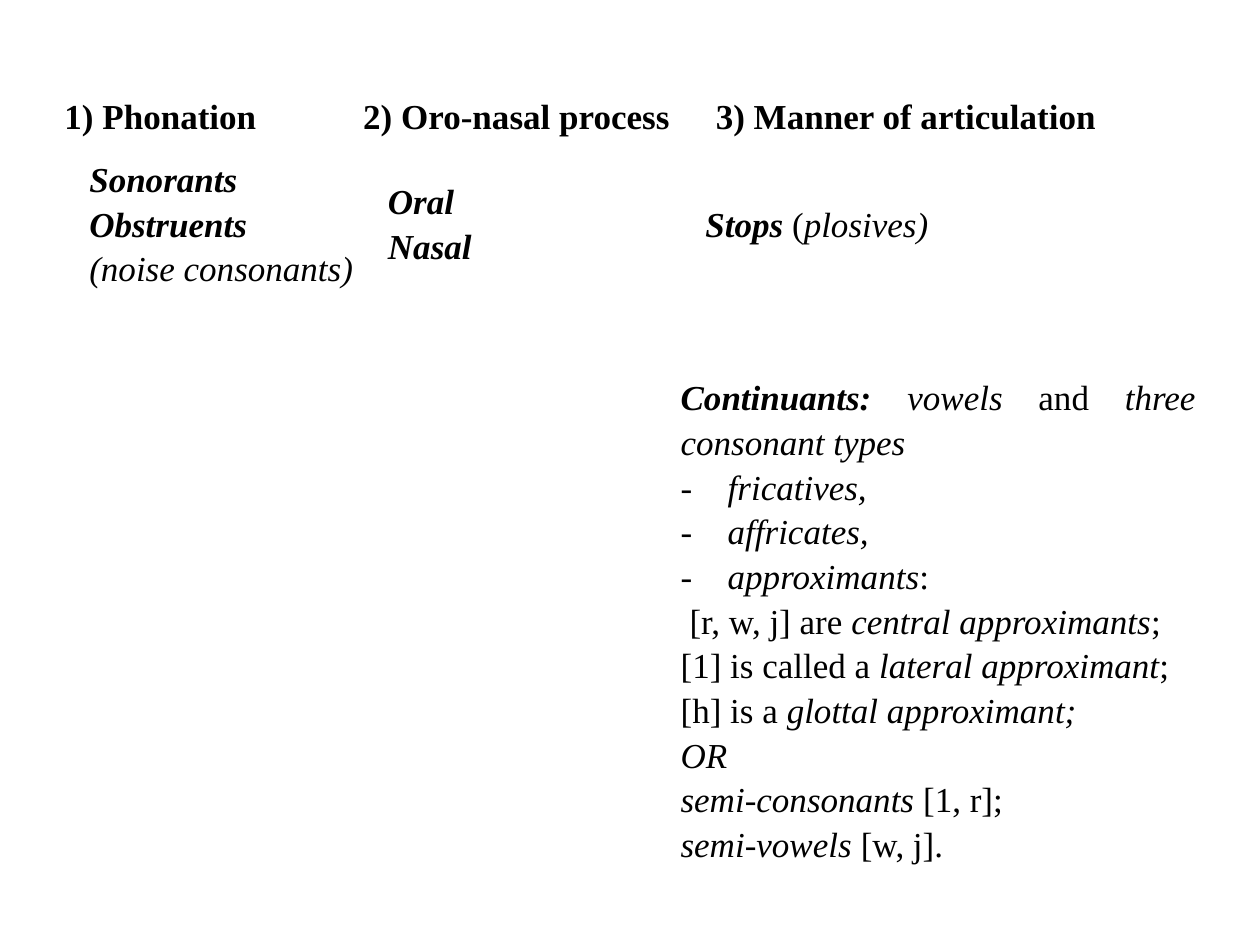
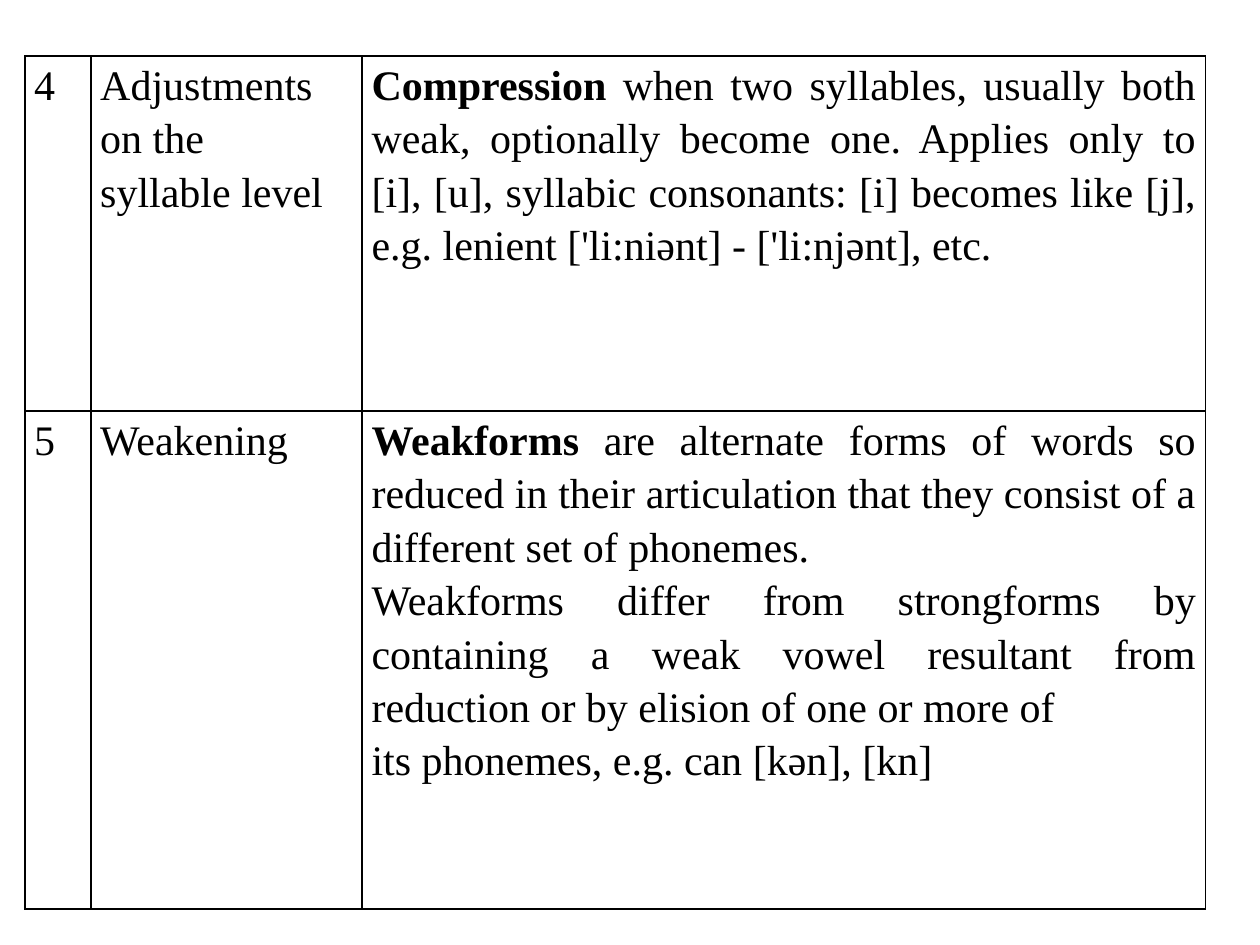
from lxml.etree import SubElement
from pptx import Presentation
from pptx.dml.color import RGBColor
from pptx.enum.text import MSO_ANCHOR, PP_ALIGN
from pptx.oxml.ns import qn
from pptx.util import Cm, Pt

COLORS = {"paper": "FFFFFF", "ink": "000000"}
FONT = "Times New Roman"
LINE_SPACING = 1.15
BLANK_LAYOUT = 6


# Paragraph kinds
def para(*runs, align=PP_ALIGN.JUSTIFY, left=0, first=0, bullet=None):
    """Describe a paragraph; each run is (text, style), style drawn from "b", "i"."""
    return {"runs": runs, "align": align, "left": left, "first": first, "bullet": bullet}


def heading(text, first=0):
    return para((text, "b"), align=PP_ALIGN.LEFT, first=first)


def term(*runs):
    return para(*runs, first=0.5)


def dash_item(*runs):
    return para(*runs, left=0.95, first=-0.95, bullet="-")


def plain(text):
    return para((text, ""))


# Table drawing
def write_paragraph(p, item, size):
    p.alignment = item["align"]
    p.line_spacing = LINE_SPACING
    pPr = p._p.get_or_add_pPr()
    pPr.set("marL", str(Cm(item["left"])))
    pPr.set("indent", str(Cm(item["first"])))
    if item["bullet"]:
        SubElement(pPr, qn("a:buFont"), typeface=FONT)
        SubElement(pPr, qn("a:buChar"), char=item["bullet"])
    for text, style in item["runs"]:
        r = p.add_run()
        r.text = text
        r.font.name = FONT
        r.font.size = Pt(size)
        r.font.bold = "b" in style
        r.font.italic = "i" in style
        r.font.color.rgb = RGBColor.from_string(COLORS["ink"])


def add_borders(cell, width=1):
    tcPr = cell._tc.get_or_add_tcPr()
    for side in ("lnL", "lnR", "lnT", "lnB"):
        ln = SubElement(tcPr, qn(f"a:{side}"), w=str(Pt(width)))
        fill = SubElement(ln, qn("a:solidFill"))
        SubElement(fill, qn("a:srgbClr"), val=COLORS["ink"])


def fill_cell(cell, items, size, margins, anchor, bordered):
    if bordered:
        add_borders(cell)
    cell.fill.solid()
    cell.fill.fore_color.rgb = RGBColor.from_string(COLORS["paper"])
    cell.vertical_anchor = anchor
    side, top, bottom = margins
    cell.margin_left = cell.margin_right = Cm(side)
    cell.margin_top, cell.margin_bottom = Cm(top), Cm(bottom)
    tf = cell.text_frame
    for i, item in enumerate(items):
        p = tf.add_paragraph() if i else tf.paragraphs[0]
        write_paragraph(p, item, size)


def add_text_table(s, left, top, widths, heights, rows, size, row_margins,
                   anchor=MSO_ANCHOR.TOP, bordered=False):
    """Draw a table; row_margins holds (side, top, bottom) for each row."""
    frame = s.shapes.add_table(len(heights), len(widths), Cm(left), Cm(top),
                               Cm(sum(widths)), Cm(sum(heights)))
    table = frame.table
    table.first_row = table.horz_banding = False
    for column, width in zip(table.columns, widths):
        column.width = Cm(width)
    for row, height, contents, margins in zip(table.rows, heights, rows, row_margins):
        row.height = Cm(height)
        for cell, items in zip(row.cells, contents):
            fill_cell(cell, items, size, margins, anchor, bordered)


# Slides
def add_classification_slide(prs):
    s = prs.slides.add_slide(prs.slide_layouts[BLANK_LAYOUT])
    headings = [
        [heading("1) Phonation")],
        [heading("2) Oro-nasal process")],
        [heading("3) Manner of articulation", first=0.71)],
    ]
    main_classes = [
        [term(("Sonorants", "bi")), term(("Obstruents", "bi")),
         term(("(noise consonants)", "i"))],
        [term(("Oral", "bi")), term(("Nasal", "bi"))],
        [term(("Stops ", "bi"), ("(", ""), ("plosives)", "i"))],
    ]
    continuants = [
        para(("Continuants: ", "bi"), ("vowels", "i"), (" and ", ""),
             ("three consonant types", "i")),
        dash_item(("fricatives,", "i")),
        dash_item(("affricates,", "i")),
        dash_item(("approximants", "i"), (":", "")),
        para(("[r, w, j] are ", ""), ("central approximants", "i"), (";", ""), first=0.18),
        para(("[1] is called a ", ""), ("lateral approximant", "i"), (";", "")),
        para(("[h] is a ", ""), ("glottal approximant;", "i")),
        para(("OR", "i")),
        para(("semi-consonants ", "i"), ("[1, r];", "")),
        para(("semi-vowels ", "i"), ("[w, j].", "")),
    ]
    add_text_table(s, 1.27, 1.52, [6.02, 6.4, 10.44], [1.57, 3.23, 11.43],
                   [headings, main_classes, [[], [], continuants]], size=20,
                   row_margins=[(0.03, 0.03, 0.03), (0.03, 0.03, 0.47), (0.03, 0.93, 0.03)],
                   anchor=MSO_ANCHOR.MIDDLE)


def add_adjustments_slide(prs):
    s = prs.slides.add_slide(prs.slide_layouts[BLANK_LAYOUT])
    compression = [
        [plain("4")],
        [plain("Adjustments on the"), plain("syllable level")],
        [para(("Compression", "b"),
              (" when two syllables, usually both weak, optionally become one. "
               "Applies only to [i], [u], syllabic consonants: [i] becomes like [j], "
               "e.g. lenient ['li:niənt] - ['li:njənt], etc.", ""))],
    ]
    weakening = [
        [plain("5")],
        [plain("Weakening")],
        [para(("Weakforms", "b"),
              (" are alternate forms of words so reduced in their articulation "
               "that they consist of a different set of phonemes.", "")),
         plain("Weakforms differ from strongforms by containing a weak vowel "
               "resultant from reduction or by elision of one or more of"),
         plain("its phonemes, e.g. can [kən], [kn]")],
    ]
    add_text_table(s, 0.5, 1.13, [1.33, 5.47, 17], [7.16, 10.03],
                   [compression, weakening], size=24,
                   row_margins=[(0.19, 0, 0)] * 2, bordered=True)


def main():
    prs = Presentation()
    prs.slide_width, prs.slide_height = Cm(25.4), Cm(19.05)
    add_classification_slide(prs)
    add_adjustments_slide(prs)
    prs.save("out.pptx")


if __name__ == "__main__":
    main()
